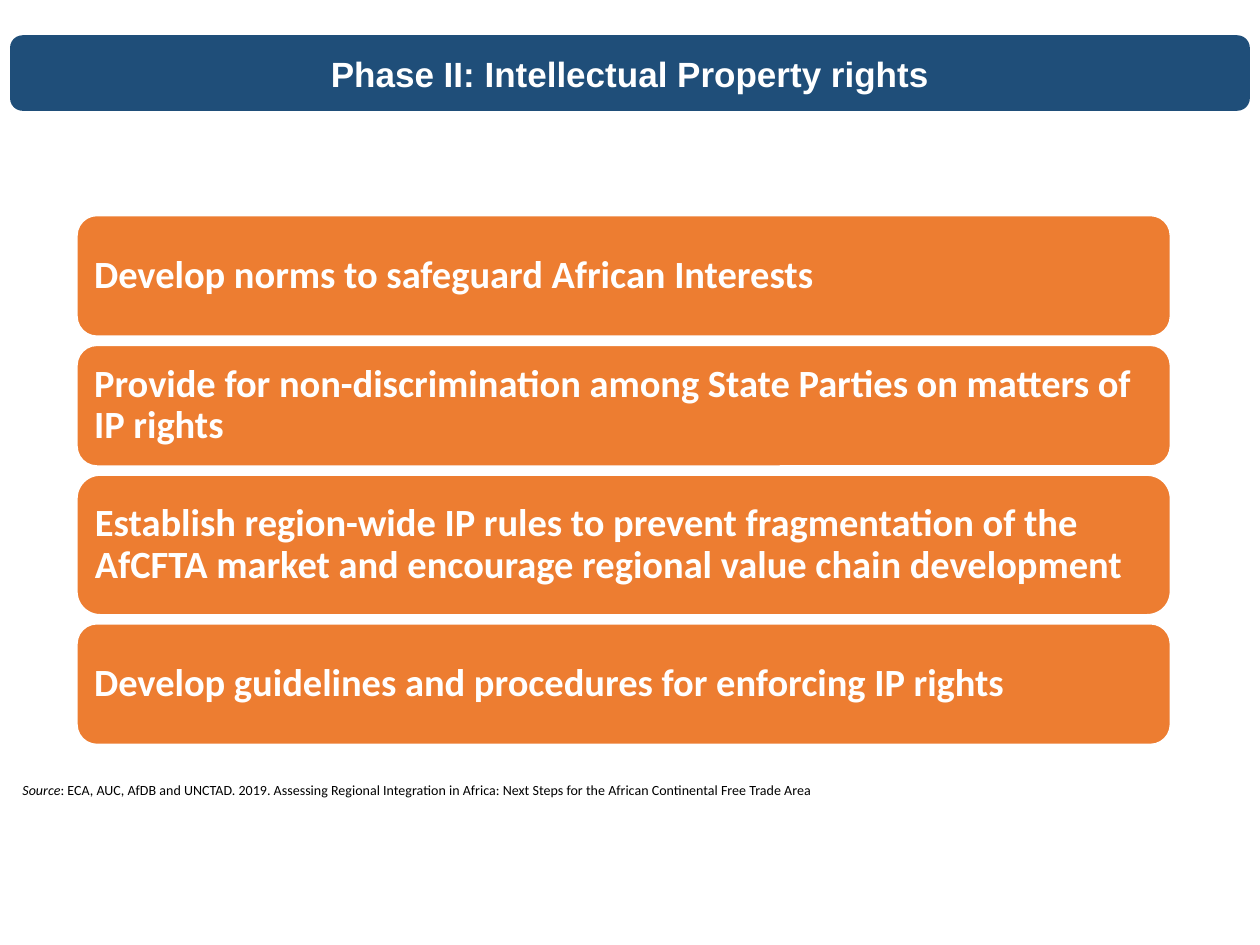
from dataclasses import dataclass

from pptx import Presentation
from pptx.dml.color import RGBColor
from pptx.enum.shapes import MSO_SHAPE
from pptx.enum.text import MSO_ANCHOR, MSO_AUTO_SIZE, PP_ALIGN
from pptx.util import Inches, Pt

ROUNDED = MSO_SHAPE.ROUNDED_RECTANGLE
MIDDLE, TOP = MSO_ANCHOR.MIDDLE, MSO_ANCHOR.TOP
LEFT, CENTER = PP_ALIGN.LEFT, PP_ALIGN.CENTER
NO_AUTOFIT = MSO_AUTO_SIZE.NONE

NAVY, ORANGE, WHITE, BLACK = "1F4E79", "ED7D31", "FFFFFF", "000000"
TITLE_ONLY_LAYOUT = 5
CARD_LEFT, CARD_WIDTH = 0.61, 8.68
FIRST_CARD_TOP, CARD_GAP = 1.71, 0.07


@dataclass(frozen=True)
class Area:
    left: float
    top: float
    width: float
    height: float

    def lengths(self) -> tuple:
        return tuple(Inches(n) for n in (self.left, self.top, self.width, self.height))


@dataclass(frozen=True)
class Card:
    text: str
    height: float = 0.96


TITLE_AREA = Area(0.08, 0.28, 9.84, 0.6)
SOURCE_AREA = Area(0.08, 6.15, 9.51, 0.24)
CARDS = [
    Card("Develop norms to safeguard African Interests"),
    Card("Provide for non-discrimination among State Parties on matters of IP rights"),
    Card("Establish region-wide IP rules to prevent fragmentation of the AfCFTA market "
         "and encourage regional value chain development", 1.11),
    Card("Develop guidelines and procedures for enforcing IP rights"),
]


def color(value: str) -> RGBColor:
    return RGBColor.from_string(value)


def add_span(para, text: str, *, size: float, font: str = "Calibri", fill: str = WHITE,
             bold: bool = False, italic: bool = False) -> None:
    span = para.add_run()
    span.text = text
    span.font.name = font
    span.font.size = Pt(size)
    span.font.bold = bold
    span.font.italic = italic
    span.font.color.rgb = color(fill)


def prepare_text(box, *, align=LEFT, anchor=MIDDLE, side: float = 0.1,
                 edge: float = 0.1, spacing: float = 1.0):
    frame = box.text_frame
    frame.word_wrap = True
    frame.auto_size = NO_AUTOFIT
    frame.vertical_anchor = anchor
    frame.margin_left = frame.margin_right = Inches(side)
    frame.margin_top = frame.margin_bottom = Inches(edge)
    para = frame.paragraphs[0]
    para.alignment = align
    para.line_spacing = spacing
    return para


def add_panel(page, area: Area, fill: str, outline: str = ""):
    panel = page.shapes.add_shape(ROUNDED, *area.lengths())
    panel.shadow.inherit = False
    panel.fill.solid()
    panel.fill.fore_color.rgb = color(fill)
    if outline:
        panel.line.color.rgb = color(outline)
        panel.line.width = Pt(1)
    else:
        panel.line.fill.background()
    return panel


def add_title(page, text: str) -> None:
    add_panel(page, TITLE_AREA, NAVY)
    title = page.shapes.title
    title.left, title.top, title.width, title.height = TITLE_AREA.lengths()
    page.shapes._spTree.append(title._element)
    para = prepare_text(title, align=CENTER)
    add_span(para, text, size=20, font="Arial", bold=True)


def add_cards(page, cards: list[Card]) -> None:
    top = FIRST_CARD_TOP
    for card in cards:
        panel = add_panel(page, Area(CARD_LEFT, top, CARD_WIDTH, card.height), ORANGE, WHITE)
        para = prepare_text(panel, side=0.09, edge=0.09, spacing=0.9)
        add_span(para, card.text, size=22, bold=True)
        top += card.height + CARD_GAP


def add_source(page, label: str, citation: str) -> None:
    box = page.shapes.add_textbox(*SOURCE_AREA.lengths())
    para = prepare_text(box, anchor=TOP, edge=0.05)
    add_span(para, label, size=8, fill=BLACK, italic=True)
    add_span(para, citation, size=8, fill=BLACK)


def main() -> None:
    deck = Presentation()
    deck.slide_width, deck.slide_height = Inches(10), Inches(7.5)
    page = deck.slides.add_slide(deck.slide_layouts[TITLE_ONLY_LAYOUT])
    add_title(page, "Phase II: Intellectual Property rights")
    add_source(page, "Source", ": ECA, AUC, AfDB and UNCTAD. 2019. Assessing Regional Integration "
               "in Africa: Next Steps for the African Continental Free Trade Area")
    add_cards(page, CARDS)
    deck.save("out.pptx")


if __name__ == "__main__":
    main()
